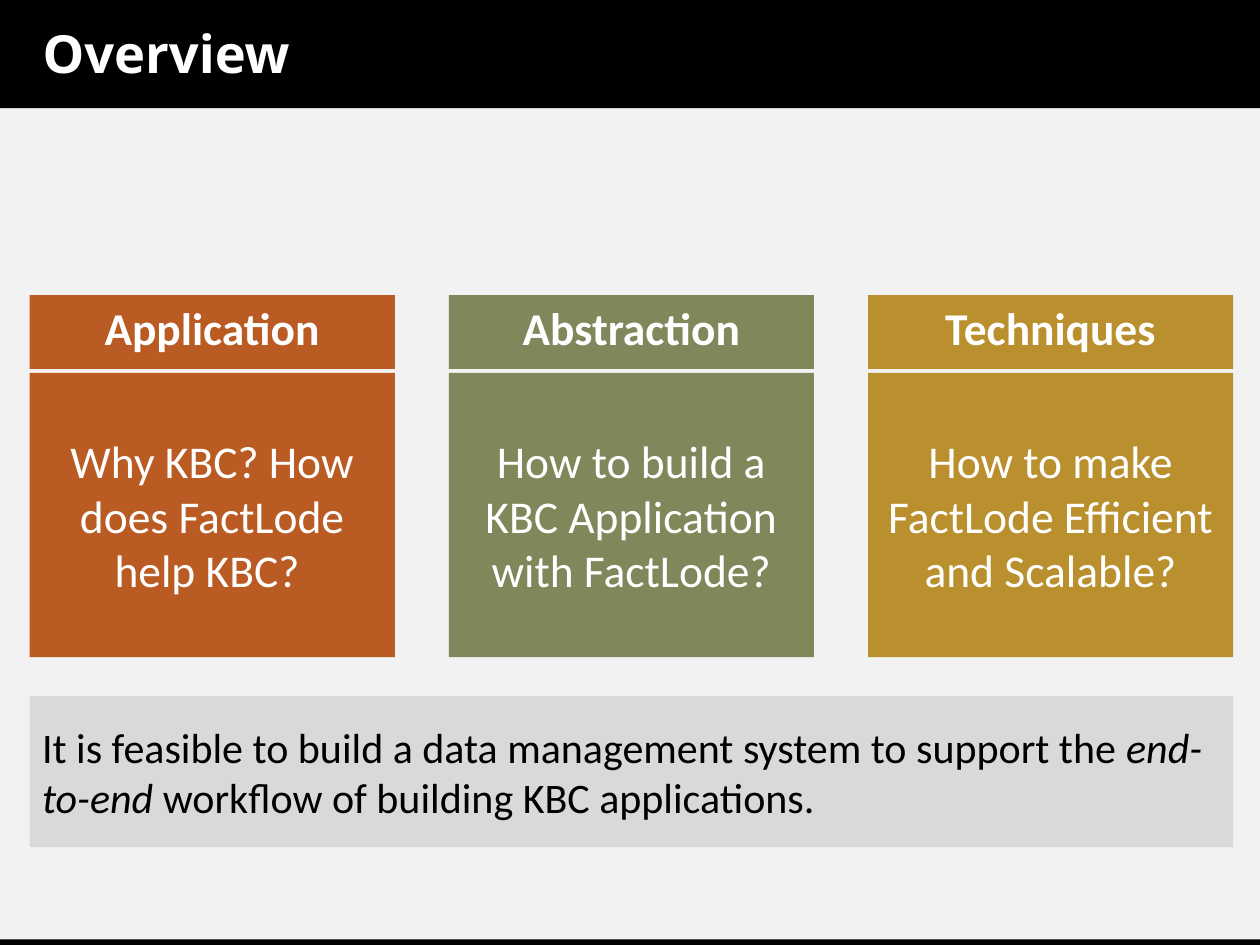
from dataclasses import dataclass

from pptx import Presentation
from pptx.dml.color import RGBColor
from pptx.enum import shapes, text
from pptx.util import Cm, Pt


@dataclass(frozen=True)
class Theme:
    background: str = "F2F2F2"
    bar: str = "000000"
    dark_text: str = "000000"
    light_text: str = "FFFFFF"
    summary: str = "D9D9D9"
    application: str = "B95B22"
    abstraction: str = "81875A"
    techniques: str = "BA8F2D"
    title_font: str = "Open Sans"
    body_font: str = "Calibri"
    title_size: int = 30
    column_size: int = 26
    summary_size: int = 24


def add_box(s, left, top, width, height, fill):
    sp = s.shapes.add_shape(shapes.MSO_SHAPE.RECTANGLE, Cm(left), Cm(top), Cm(width), Cm(height))
    sp.shadow.inherit = False
    sp.fill.solid()
    sp.fill.fore_color.rgb = RGBColor.from_string(fill)
    sp.line.fill.background()
    return sp


def set_text(sp, runs, font, size, color, align=text.PP_ALIGN.LEFT, bold=False):
    tf = sp.text_frame
    tf.word_wrap = True
    tf.vertical_anchor = text.MSO_ANCHOR.MIDDLE
    tf.margin_left = tf.margin_right = Cm(0.25)
    tf.margin_top = tf.margin_bottom = Cm(0.05)
    p = tf.paragraphs[0]
    p.alignment = align
    p.font.name = font
    p.font.size = Pt(size)
    p.font.bold = bold
    p.font.color.rgb = RGBColor.from_string(color)
    for wording, italic in runs:
        r = p.add_run()
        r.text = wording
        if italic:
            r.font.italic = True
    return p


theme = Theme()
prs = Presentation()
prs.slide_width, prs.slide_height = Cm(25.4), Cm(19.05)
s = prs.slides.add_slide(prs.slide_layouts[6])
s.background.fill.solid()
s.background.fill.fore_color.rgb = RGBColor.from_string(theme.background)

add_box(s, 0, 0, 25.4, 2.18, theme.bar)
add_box(s, 0, 18.94, 25.4, 0.11, theme.bar)

title = s.shapes.add_textbox(Cm(0.61), Cm(0.05), Cm(22.86), Cm(2.03))
set_text(title, [("Overview", False)], theme.title_font, theme.title_size, theme.light_text, bold=True)

left, content_width, column_width = 0.6, 24.26, 7.36
pitch = (content_width - column_width) / 2

summary = add_box(s, left, 14.03, content_width, 3.05, theme.summary)
summary_runs = [
    ("It is feasible to build a data management system to support the ", False),
    ("end-to-end ", True),
    ("workflow of building KBC applications.", False),
]
set_text(summary, summary_runs, theme.body_font, theme.summary_size, theme.dark_text)

columns = [
    ("Application", "Why KBC? How does FactLode help KBC? ", theme.application),
    ("Abstraction", "How to build a KBC Application with FactLode?", theme.abstraction),
    ("Techniques", "How to make FactLode Efficient and Scalable?", theme.techniques),
]
for i, (heading, question, color) in enumerate(columns):
    x = left + i * pitch
    header = add_box(s, x, 5.95, column_width, 1.49, color)
    p = set_text(header, [(heading, False)], theme.body_font, theme.column_size,
                 theme.light_text, text.PP_ALIGN.CENTER, bold=True)
    p.line_spacing = 0.8
    body = add_box(s, x, 7.52, column_width, 5.73, color)
    set_text(body, [(question, False)], theme.body_font, theme.column_size,
             theme.light_text, text.PP_ALIGN.CENTER)

prs.save("out.pptx")
